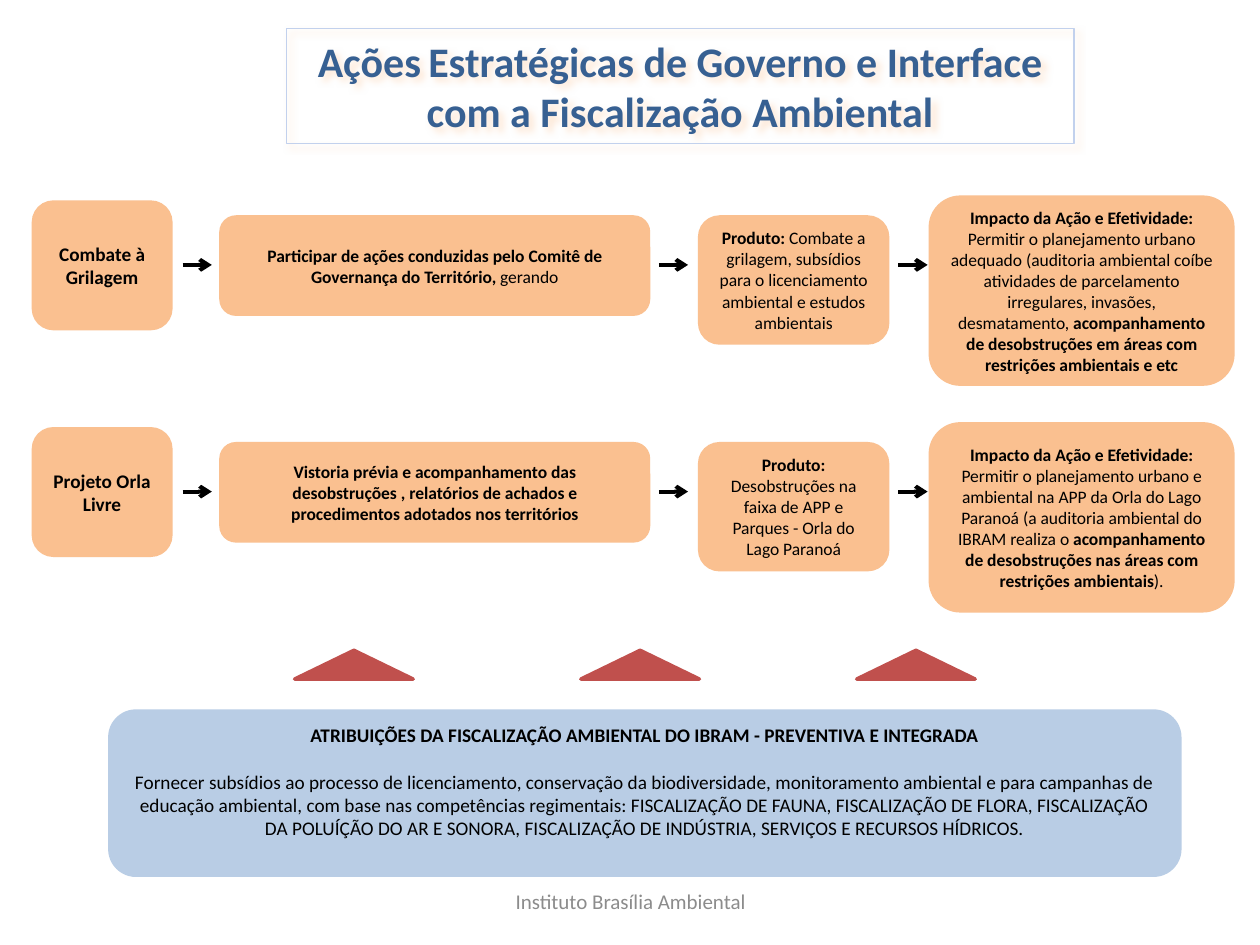
from lxml.etree import SubElement
from pptx import Presentation
from pptx.dml.color import RGBColor
from pptx.enum.shapes import MSO_CONNECTOR, MSO_SHAPE
from pptx.enum.text import MSO_ANCHOR, MSO_AUTO_SIZE, PP_ALIGN
from pptx.oxml.ns import qn
from pptx.util import Cm, Pt

COLORS = {
    "title": "376092", "title_border": "C2D1ED", "title_shadow": "FCD5B5",
    "step": "F79646", "duties": "B9CDE5", "pointer": "C0504D",
    "text": "000000", "footer": "8C8C8C",
}
FONT = "Calibri"
ROW_PITCH = 4.57
ARROW_TOP = 5.34
ARROW_LEFTS = (3.68, 13.28, 18.11)
ARROW_LENGTH = 0.59
POINTER_LEFTS = (5.94, 11.71, 17.27)

# Left, top in the first row, width, height and text size of each column
COLUMNS = (
    (0.64, 4.04, 2.84, 2.62, 11),
    (4.42, 4.34, 8.69, 2.03, 10),
    (14.07, 4.34, 3.86, 2.61, 10),
    (18.72, 3.94, 6.17, 3.84, 10),
)

# Each text is a list of (words, bold) spans
ROWS = (
    (
        [("Combate à Grilagem", True)],
        [("Participar de ações conduzidas pelo Comitê de Governança do "
          "Território, ", True), ("gerando", False)],
        [("Produto: ", True),
         ("Combate a grilagem, subsídios para o licenciamento ambiental e "
          "estudos ambientais", False)],
        [("Impacto da Ação e Efetividade: ", True),
         ("Permitir o planejamento urbano adequado (auditoria ambiental coíbe "
          "atividades de parcelamento irregulares, invasões, desmatamento, ", False),
         ("acompanhamento de desobstruções em áreas com restrições ambientais "
          "e etc", True)],
    ),
    (
        [("Projeto Orla Livre", True)],
        [("Vistoria prévia e acompanhamento das desobstruções , relatórios de "
          "achados e procedimentos adotados nos territórios", True)],
        [("Produto: ", True),
         ("Desobstruções na faixa de APP e Parques - Orla do Lago Paranoá", False)],
        [("Impacto da Ação e Efetividade: ", True),
         ("Permitir o planejamento urbano e ambiental na APP da Orla do Lago "
          "Paranoá (a auditoria ambiental do IBRAM realiza o ", False),
         ("acompanhamento de desobstruções nas áreas com restrições "
          "ambientais", True),
         (").", False)],
    ),
)
DUTIES = (
    [("ATRIBUIÇÕES DA FISCALIZAÇÃO AMBIENTAL DO IBRAM - PREVENTIVA E "
      "INTEGRADA", True)],
    [("Fornecer subsídios ao processo de licenciamento, conservação da "
      "biodiversidade, monitoramento ambiental e para campanhas de educação "
      "ambiental, com base nas competências regimentais: FISCALIZAÇÃO DE FAUNA, "
      "FISCALIZAÇÃO DE FLORA, FISCALIZAÇÃO DA POLUÍÇÃO DO AR E SONORA, "
      "FISCALIZAÇÃO DE INDÚSTRIA, SERVIÇOS E RECURSOS HÍDRICOS.", False)],
)


def color(name):
    return RGBColor.from_string(COLORS[name])


def add_span(para, words, size, bold, color_name="text"):
    span = para.add_run()
    span.text = words
    span.font.name = FONT
    span.font.size = Pt(size)
    span.font.bold = bold
    span.font.color.rgb = color(color_name)


def add_box(shapes, kind, place, fill):
    """Add a filled preset shape without outline or shadow; place is in cm."""
    box = shapes.add_shape(kind, *(Cm(length) for length in place))
    box.shadow.inherit = False
    box.fill.solid()
    box.fill.fore_color.rgb = color(fill)
    box.line.fill.background()
    return box


def write_spans(para, spans, size):
    para.alignment = PP_ALIGN.CENTER
    for words, bold in spans:
        add_span(para, words, size, bold)


def add_rounded_box(shapes, place, fill, texts, size):
    box = add_box(shapes, MSO_SHAPE.ROUNDED_RECTANGLE, place, fill)
    frame = box.text_frame
    frame.word_wrap = True
    frame.vertical_anchor = MSO_ANCHOR.MIDDLE
    for index, spans in enumerate(texts):
        para = frame.add_paragraph() if index else frame.paragraphs[0]
        write_spans(para, spans, size)
    return box


def set_opacity(box, percent):
    fill = box._element.spPr.find(qn("a:solidFill"))
    SubElement(fill[0], qn("a:alpha"), val=str(percent * 1000))


def add_arrow(shapes, left, top):
    arrow = shapes.add_connector(MSO_CONNECTOR.STRAIGHT, Cm(left), Cm(top),
                                 Cm(left + ARROW_LENGTH), Cm(top))
    arrow.line.color.rgb = color("text")
    arrow.line.width = Pt(2.25)
    SubElement(arrow.line._get_or_add_ln(), qn("a:tailEnd"), type="arrow")
    SubElement(arrow._element.spPr, qn("a:effectLst"))


def add_row(page, texts, offset):
    shapes = page.shapes.add_group_shape().shapes
    for (left, top, width, height, size), spans in zip(COLUMNS, texts):
        box = add_rounded_box(shapes, (left, top + offset, width, height),
                              "step", [spans], size)
        set_opacity(box, 60)
    for left in ARROW_LEFTS:
        add_arrow(shapes, left, ARROW_TOP + offset)


def add_soft_shadow(shape):
    shape.shadow.inherit = False
    effects = shape._element.spPr.find(qn("a:effectLst"))
    shadow = SubElement(effects, qn("a:outerShdw"), blurRad=str(Pt(4)),
                        dist=str(Pt(3)), dir="2700000", algn="tl", rotWithShape="0")
    tint = SubElement(shadow, qn("a:srgbClr"), val=COLORS["title_shadow"])
    SubElement(tint, qn("a:alpha"), val="58000")


def write_title(page):
    title = page.shapes.title
    title.left, title.top, title.width, title.height = (
        Cm(5.77), Cm(0.58), Cm(15.88), Cm(2.31))
    title.fill.background()
    title.line.color.rgb = color("title_border")
    title.line.width = Pt(0.75)
    add_soft_shadow(title)
    frame = title.text_frame
    frame.word_wrap = True
    frame.auto_size = MSO_AUTO_SIZE.NONE
    frame.vertical_anchor = MSO_ANCHOR.TOP
    para = frame.paragraphs[0]
    para.alignment = PP_ALIGN.CENTER
    for words, size in (
        ("Ações", 24), (" ", 18),
        ("Estratégicas de Governo e Interface com a Fiscalização Ambiental", 24),
    ):
        add_span(para, words, size, True, "title")


def add_duties(page):
    box = add_rounded_box(page.shapes, (2.18, 14.3, 21.64, 3.38),
                          "duties", DUTIES, 11)
    box.text_frame.paragraphs[1].space_before = Pt(13.4)
    box.text_frame.margin_bottom = Cm(0.6)


def add_pointer(page, left):
    pointer = add_box(page.shapes, MSO_SHAPE.ISOSCELES_TRIANGLE,
                      (left, 13.11, 2.39, 0.58), "pointer")
    pointer.line.color.rgb = color("pointer")
    pointer.line.width = Pt(2)
    SubElement(pointer.line._get_or_add_ln(), qn("a:round"))


def add_footer(page):
    box = page.shapes.add_textbox(Cm(8.69), Cm(17.65), Cm(8.05), Cm(1.02))
    frame = box.text_frame
    frame.word_wrap = True
    frame.vertical_anchor = MSO_ANCHOR.MIDDLE
    para = frame.paragraphs[0]
    para.alignment = PP_ALIGN.CENTER
    add_span(para, "Instituto Brasília Ambiental", 12, False, "footer")


def main():
    deck = Presentation()
    deck.slide_width, deck.slide_height = Cm(25.4), Cm(19.05)
    page = deck.slides.add_slide(deck.slide_layouts.get_by_name("Title Only"))
    write_title(page)
    for index, texts in enumerate(ROWS):
        add_row(page, texts, index * ROW_PITCH)
    add_duties(page)
    for left in POINTER_LEFTS:
        add_pointer(page, left)
    add_footer(page)
    deck.save("out.pptx")


if __name__ == "__main__":
    main()
